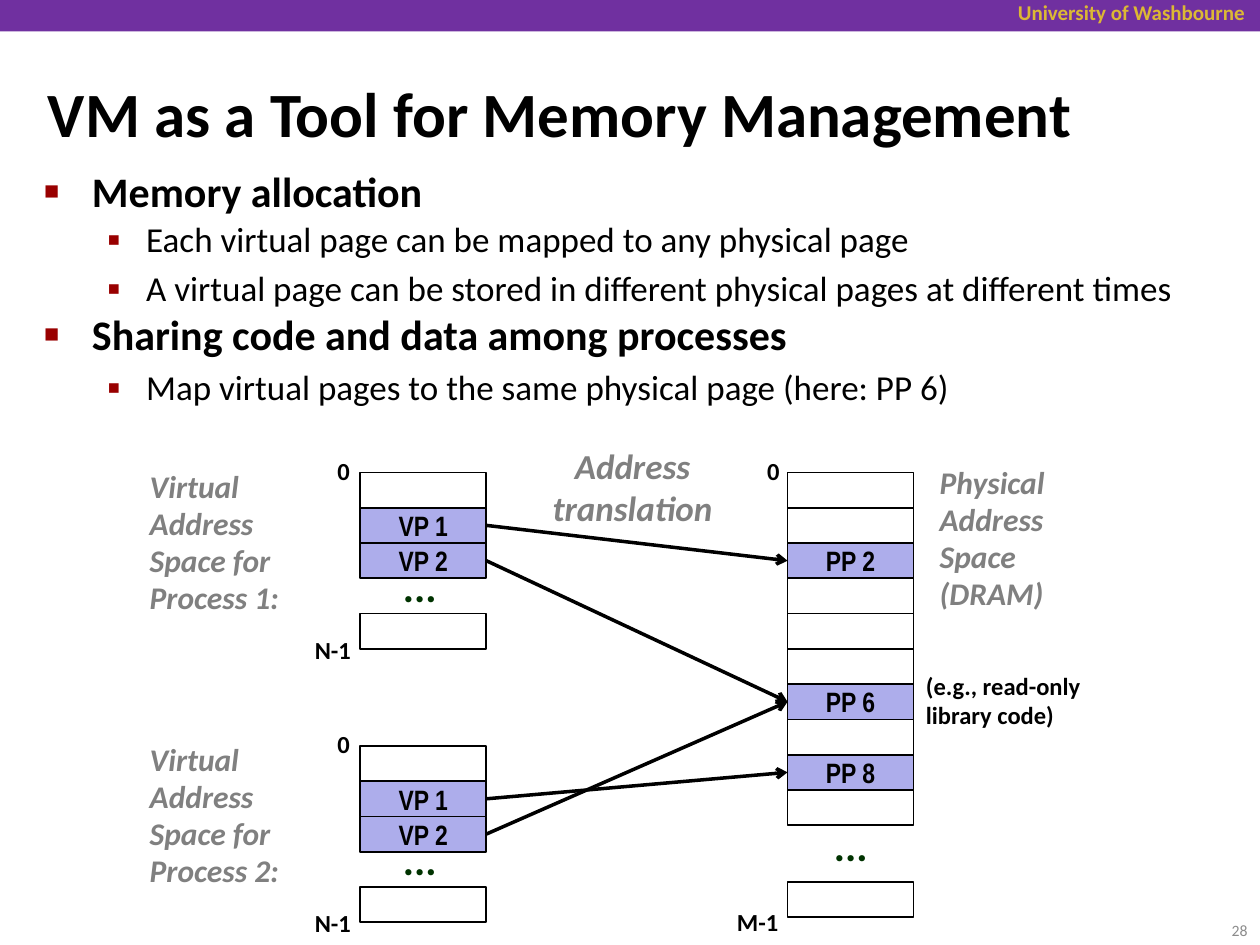
"""Build the slide on virtual memory as a tool for memory management."""
import pptx
import pptx.dml.color
import pptx.enum.shapes
import pptx.enum.text
import pptx.oxml
import pptx.oxml.ns
import pptx.util
from pptx.util import Inches

RGB = pptx.dml.color.RGBColor
ALIGN = pptx.enum.text.PP_ALIGN
ANCHOR = pptx.enum.text.MSO_ANCHOR
FIT = pptx.enum.text.MSO_AUTO_SIZE
KIND = pptx.enum.shapes.MSO_SHAPE
LINE = pptx.enum.shapes.MSO_CONNECTOR

BLACK = RGB(0x00, 0x00, 0x00)
PURPLE = RGB(0x70, 0x30, 0xA0)
GOLD = RGB(0xDC, 0xB8, 0x34)
LILAC = RGB(0xAD, 0xAD, 0xEB)
GRAY = RGB(0x80, 0x80, 0x80)
PALE = RGB(0x8C, 0x8C, 0x8C)
GREEN = RGB(0x00, 0x33, 0x00)
RED = RGB(0x99, 0x00, 0x00)

PITCH = 0.28
TAGS = dict(size=18, color=GRAY, italic=True, space=0.98)
NOTES = dict(size=14, space=0.98)
DOTS = dict(size=24, color=GREEN, space=0.88, before=9, wrap=False)


def write(para, text, size=14, color=BLACK, bold=True, italic=False,
          font="Calibri", align=ALIGN.LEFT, space=None, before=None):
    run = para.add_run()
    run.text = text
    face = run.font
    face.name, face.size = font, pptx.util.Pt(size)
    face.bold, face.italic = bold, italic
    face.color.rgb = color
    para.alignment = align
    if space:
        para.line_spacing = space
    if before:
        para.space_before = pptx.util.Pt(before)


def add_xml(parent, xml):
    space = pptx.oxml.ns.nsdecls("a")
    parent.append(pptx.oxml.parse_xml(xml.replace("/>", f" {space}/>", 1)
                                      if xml.endswith("/>") and xml.count("<") == 1
                                      else xml.replace(">", f" {space}>", 1)))


class Deck:
    """Holds the style and the current slide."""

    def __init__(self):
        self.show = pptx.Presentation()
        self.show.slide_width = Inches(10)
        self.show.slide_height = Inches(7.5)
        self.slide = self.show.slides.add_slide(self.show.slide_layouts[1])
        self.shapes = self.slide.shapes

    def place(self, shape, left, top, width, height):
        shape.left, shape.top = Inches(left), Inches(top)
        shape.width, shape.height = Inches(width), Inches(height)
        shape.text_frame.auto_size = FIT.NONE
        return shape.text_frame

    def title(self, text, *area):
        frame = self.place(self.shapes.title, *area)
        frame.vertical_anchor = ANCHOR.MIDDLE
        write(frame.paragraphs[0], text, size=36)

    def body(self, items, *area):
        frame = self.place(self.slide.placeholders[1], *area)
        for i, (level, text, space) in enumerate(items):
            para = frame.add_paragraph() if i else frame.paragraphs[0]
            para.level = level
            write(para, text, size=20 if level else 24, bold=not level, space=space)
            indent, hang, scale, mark = ((0.81, 0.31, 110, "▪") if level
                                         else (0.38, 0.38, 60, "■"))
            props = para._p.get_or_add_pPr()
            props.set("marL", str(Inches(indent)))
            props.set("indent", str(-Inches(hang)))
            add_xml(props, f'<a:buClr><a:srgbClr val="{RED}"/></a:buClr>')
            add_xml(props, f'<a:buSzPct val="{scale * 1000}"/>')
            add_xml(props, f'<a:buChar char="{mark}"/>')

    def label(self, text, left, top, width, height, wrap=True,
              anchor=ANCHOR.TOP, **style):
        box = self.shapes.add_textbox(0, 0, 0, 0)
        frame = self.place(box, left, top, width, height)
        frame.word_wrap = wrap
        frame.vertical_anchor = anchor
        for i, line in enumerate(text.split("\n")):
            para = frame.add_paragraph() if i else frame.paragraphs[0]
            write(para, line, **style)

    def rect(self, left, top, width, height, fill=None, line=None, text=""):
        shape = self.shapes.add_shape(KIND.RECTANGLE, 0, 0, 0, 0)
        frame = self.place(shape, left, top, width, height)
        shape.shadow.inherit = False
        if fill:
            shape.fill.solid()
            shape.fill.fore_color.rgb = fill
        else:
            shape.fill.background()
        if line:
            shape.line.color.rgb = line
            shape.line.width = pptx.util.Pt(1)
        else:
            shape.line.fill.background()
        if text:
            frame.vertical_anchor = ANCHOR.MIDDLE
            write(frame.paragraphs[0], text, size=16, font="Arial Narrow",
                  align=ALIGN.CENTER)
        return shape

    def pages(self, left, top, rows, names):
        cells = {}
        for row in rows:
            name = names.get(row, "")
            cells[name] = self.rect(left, top + row * PITCH, 1, PITCH,
                                    LILAC if name else None, BLACK, name)
        return cells

    def arrow(self, start, end):
        link = self.shapes.add_connector(LINE.STRAIGHT, 0, 0, 0, 0)
        link.begin_connect(start, 3)
        link.end_connect(end, 1)
        link.line.color.rgb = BLACK
        link.line.width = pptx.util.Pt(2)
        add_xml(link.line._get_or_add_ln(), '<a:tailEnd type="arrow"/>')
        add_xml(link._element.spPr, "<a:effectLst/>")


def main():
    deck = Deck()
    deck.rect(0, 0, 10, 0.25, PURPLE)
    deck.label("University of Washbourne", 7.33, -0.05, 2.65, 0.3,
               size=12, color=GOLD, align=ALIGN.RIGHT)
    deck.title("VM as a Tool for Memory Management", 0.28, 0.58, 9.42, 0.63)
    deck.body([
        (0, "Memory allocation", 0.83),
        (1, "Each virtual page can be mapped to any physical page", 0.88),
        (1, "A virtual page can be stored in different physical pages at different times", None),
        (0, "Sharing code and data among processes", 0.83),
        (1, "Map virtual pages to the same physical page (here: PP 6)", None),
    ], 0.25, 1.33, 9.58, 2.08)

    spaces = []
    for num, top in enumerate((3.75, 5.92), 1):
        deck.label(f"Virtual Address Space for Process {num}:",
                   1.09, top - 0.08, 1.5, 1.28, **TAGS)
        deck.label("0", 2.58, top - 0.17, 0.31, 0.33, wrap=False, **NOTES)
        deck.label("N-1", 2.4, top + 1.25, 0.49, 0.33, wrap=False, **NOTES)
        spaces.append(deck.pages(2.86, top, (0, 1, 2, 4), {1: "VP 1", 2: "VP 2"}))
        deck.label("...", 3.1, top + 0.7, 0.47, 0.45, **DOTS)

    frames = deck.pages(6.25, 3.75, range(10), {2: "PP 2", 6: "PP 6", 8: "PP 8"})
    deck.rect(6.25, 7, 1, PITCH, line=BLACK)
    deck.label("...", 6.52, 6.51, 0.47, 0.45, **DOTS)
    deck.label("0", 5.99, 3.58, 0.31, 0.33, wrap=False, **NOTES)
    deck.label("M-1", 5.75, 7.16, 0.53, 0.33, wrap=False, **NOTES)
    deck.label("Physical\nAddress\nSpace (DRAM)", 7.36, 3.64, 1.17, 1.29, **TAGS)
    deck.label("(e.g., read-only\nlibrary code)", 7.25, 5.29, 1.59, 0.56, **NOTES)

    first, second = spaces
    deck.arrow(first["VP 1"], frames["PP 2"])
    deck.arrow(first["VP 2"], frames["PP 6"])
    deck.arrow(second["VP 2"], frames["PP 6"])
    deck.arrow(second["VP 1"], frames["PP 8"])
    deck.label("Address\ntranslation", 4.28, 3.48, 1.48, 0.77, wrap=False,
               size=20, color=GRAY, italic=True, align=ALIGN.CENTER)
    deck.label("28", 9.33, 7.18, 0.67, 0.4, anchor=ANCHOR.MIDDLE,
               size=9, color=PALE, bold=False, align=ALIGN.RIGHT)
    deck.show.save("out.pptx")


if __name__ == "__main__":
    main()
